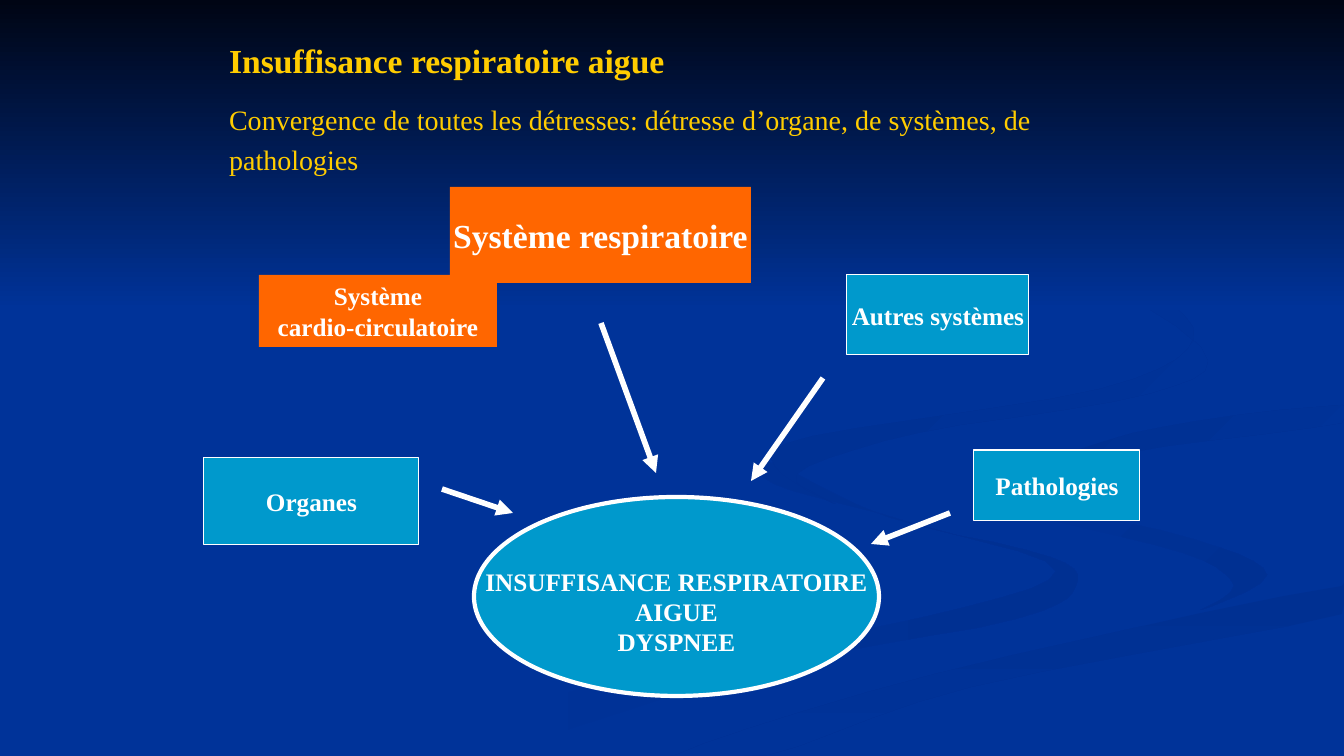
from dataclasses import dataclass

from lxml import etree
from pptx import Presentation
from pptx import util as u
from pptx.dml.color import RGBColor
from pptx.enum import shapes, text
from pptx.oxml import ns

PX = 914400 / 100.8
WIDTH, HEIGHT = 1344, 756
STEPS = 5


def px(n):
    return u.Emu(round(n * PX))


def smooth(points):
    """Closed Catmull-Rom curve through the points, kept on the slide."""
    curve = []
    for i, b in enumerate(points):
        a, c, d = (points[(i + k) % len(points)] for k in (-1, 1, 2))
        for step in range(STEPS):
            v = step / STEPS
            x, y = (q + v / 2 * (r - o + v * (2 * o - 5 * q + 4 * r - s
                                              + v * (3 * (q - r) + s - o)))
                    for o, q, r, s in zip(a, b, c, d))
            curve.append((min(round(x), WIDTH), min(round(y), HEIGHT)))
    return curve


@dataclass
class Theme:
    font: str = "Times New Roman"
    background: str = "003399"
    night: str = "000514"
    shade: str = "003092"
    heading: str = "FFCC00"
    light: str = "FFFFFF"
    blue: str = "0099CC"
    orange: str = "FF6600"
    large: int = 24
    medium: int = 20
    small: int = 18
    thin: float = 0.75
    outline: float = 3
    arrow: float = 4


class Deck:
    def __init__(self, prs, theme):
        self.theme = theme
        self.s = prs.slides.add_slide(prs.slide_layouts[1])
        fill = self.s.background.fill
        fill.solid()
        fill.fore_color.rgb = RGBColor.from_string(theme.background)

    def format(self, p, size, color, bold, align):
        p.alignment = align
        for r in p.runs:
            f = r.font
            f.name, f.size, f.bold = self.theme.font, u.Pt(size), bold
            f.color.rgb = RGBColor.from_string(color)

    def gradient(self, sp, first, last, angle):
        sp.shadow.inherit = False
        sp.line.fill.background()
        sp.fill.gradient()
        sp.fill.gradient_angle = (360 - angle) % 360
        for stop, color, position in zip(sp.fill.gradient_stops, (first, last), (0, 1)):
            stop.color.rgb = RGBColor.from_string(color)
            stop.position = position

    def ribbon(self, points, first, last, angle):
        start, *rest = smooth(points)
        builder = self.s.shapes.build_freeform(*start, scale=PX)
        builder.add_line_segments(rest, close=True)
        self.gradient(builder.convert_to_shape(), first, last, angle)

    def band(self, left, top, width, height):
        sp = self.s.shapes.add_shape(shapes.MSO_SHAPE.RECTANGLE,
                                     *map(px, (left, top, width, height)))
        self.gradient(sp, self.theme.night, self.theme.background, 90)

    def placeholder(self, index, box, lines, size, bold, anchor):
        sp = self.s.placeholders[index]
        sp.left, sp.top, sp.width, sp.height = map(px, box)
        self.s.shapes._spTree.append(sp._element)  # bring in front of the backdrop
        tf = sp.text_frame
        tf.text = "\n".join(lines)
        tf.auto_size, tf.vertical_anchor = text.MSO_AUTO_SIZE.NONE, anchor
        for p in tf.paragraphs:
            self.format(p, size, self.theme.heading, bold, text.PP_ALIGN.LEFT)
        return tf.paragraphs

    def title(self, box, line):
        self.placeholder(0, box, [line], self.theme.large, True, text.MSO_ANCHOR.MIDDLE)

    def body(self, box, lines):
        paragraphs = self.placeholder(1, box, lines, self.theme.medium, False,
                                      text.MSO_ANCHOR.TOP)
        for i, p in enumerate(paragraphs):
            p.space_before = u.Pt(4.6 if i else 0)
            pPr = p._p.get_or_add_pPr()
            pPr.set("marL", str(px(38)))
            pPr.set("indent", str(-px(38)))
            etree.SubElement(pPr, ns.qn("a:buNone"))

    def node(self, box, lines, fill, size, outline=None,
             kind=shapes.MSO_SHAPE.RECTANGLE, drop=0):
        sp = self.s.shapes.add_shape(kind, *map(px, box))
        sp.shadow.inherit = False
        sp.fill.solid()
        sp.fill.fore_color.rgb = RGBColor.from_string(fill)
        if outline:
            sp.line.color.rgb = RGBColor.from_string(self.theme.light)
            sp.line.width = u.Pt(outline)
        else:
            sp.line.fill.background()
        tf = sp.text_frame
        tf.text = "\n".join(lines)
        tf.word_wrap, tf.vertical_anchor = False, text.MSO_ANCHOR.MIDDLE
        tf.margin_top, tf.margin_bottom = px(5 + drop), px(5)
        for p in tf.paragraphs:
            self.format(p, size, self.theme.light, True, text.PP_ALIGN.CENTER)

    def arrow(self, *ends):
        c = self.s.shapes.add_connector(shapes.MSO_CONNECTOR.STRAIGHT, *map(px, ends))
        c.line.color.rgb = RGBColor.from_string(self.theme.light)
        c.line.width = u.Pt(self.theme.arrow)
        etree.SubElement(c.line._get_or_add_ln(), ns.qn("a:tailEnd"), type="triangle")
        etree.SubElement(c._element.spPr, ns.qn("a:effectLst"))


# Backdrop ribbons: guide points, first colour, last colour, angle
BASE, SHADE = Theme.background, Theme.shade
RIBBONS = [
    ([(1050, 557), (888, 517), (773, 463), (774, 484), (912, 523), (1056, 571),
      (920, 618), (616, 679), (403, 755), (486, 755), (758, 670), (1016, 619),
      (1076, 586)], BASE, SHADE, 0),
    ([(1267, 575), (1193, 539), (1001, 494), (973, 468), (1015, 509), (1183, 553),
      (1234, 586), (1201, 610)], BASE, SHADE, 45),
    ([(676, 755), (768, 755), (971, 687), (1342, 614), (1342, 586), (935, 674)],
     SHADE, BASE, 90),
    ([(1050, 464), (1110, 500), (1082, 478), (1133, 452), (1342, 423), (1342, 405),
      (1163, 427)], SHADE, BASE, 45),
    ([(918, 433), (1148, 394), (1201, 347), (1025, 235), (1136, 281), (1194, 338),
      (1100, 389), (813, 436), (775, 466), (836, 504), (797, 474)], SHADE, BASE, 45),
]


def main():
    prs = Presentation()
    prs.slide_width, prs.slide_height = px(WIDTH), px(HEIGHT)
    t = Theme()
    deck = Deck(prs, t)

    # Backdrop
    for ribbon in RIBBONS:
        deck.ribbon(*ribbon)
    deck.band(0, 0, WIDTH, 310)

    # Headings
    deck.title((219, 30, 907, 61), "Insuffisance respiratoire aigue")
    deck.body((219, 97, 907, 577), [
        "Convergence de toutes les détresses: détresse d’organe, de systèmes, de",
        "pathologies"])

    # Outcome and its causes
    deck.node((474, 497, 405, 199), ["INSUFFISANCE RESPIRATOIRE", "AIGUE", "DYSPNEE"],
              t.blue, t.small, t.outline, shapes.MSO_SHAPE.OVAL, drop=30)
    deck.node((450, 187, 301, 96), ["Système respiratoire"], t.orange, t.large)
    deck.node((204, 458, 215, 87), ["Organes"], t.blue, t.small, t.thin)
    deck.node((847, 275, 182, 80), ["Autres systèmes"], t.blue, t.small, t.thin)
    deck.node((259, 275, 238, 72), ["Système", "cardio-circulatoire"], t.orange, t.small)
    deck.node((974, 450, 166, 71), ["Pathologies"], t.blue, t.small, t.thin)

    # Arrows towards the outcome
    for ends in [(601, 323, 656, 473), (823, 378, 751, 481),
                 (950, 513, 871, 544), (442, 489, 513, 513)]:
        deck.arrow(*ends)

    prs.save("out.pptx")


if __name__ == "__main__":
    main()
